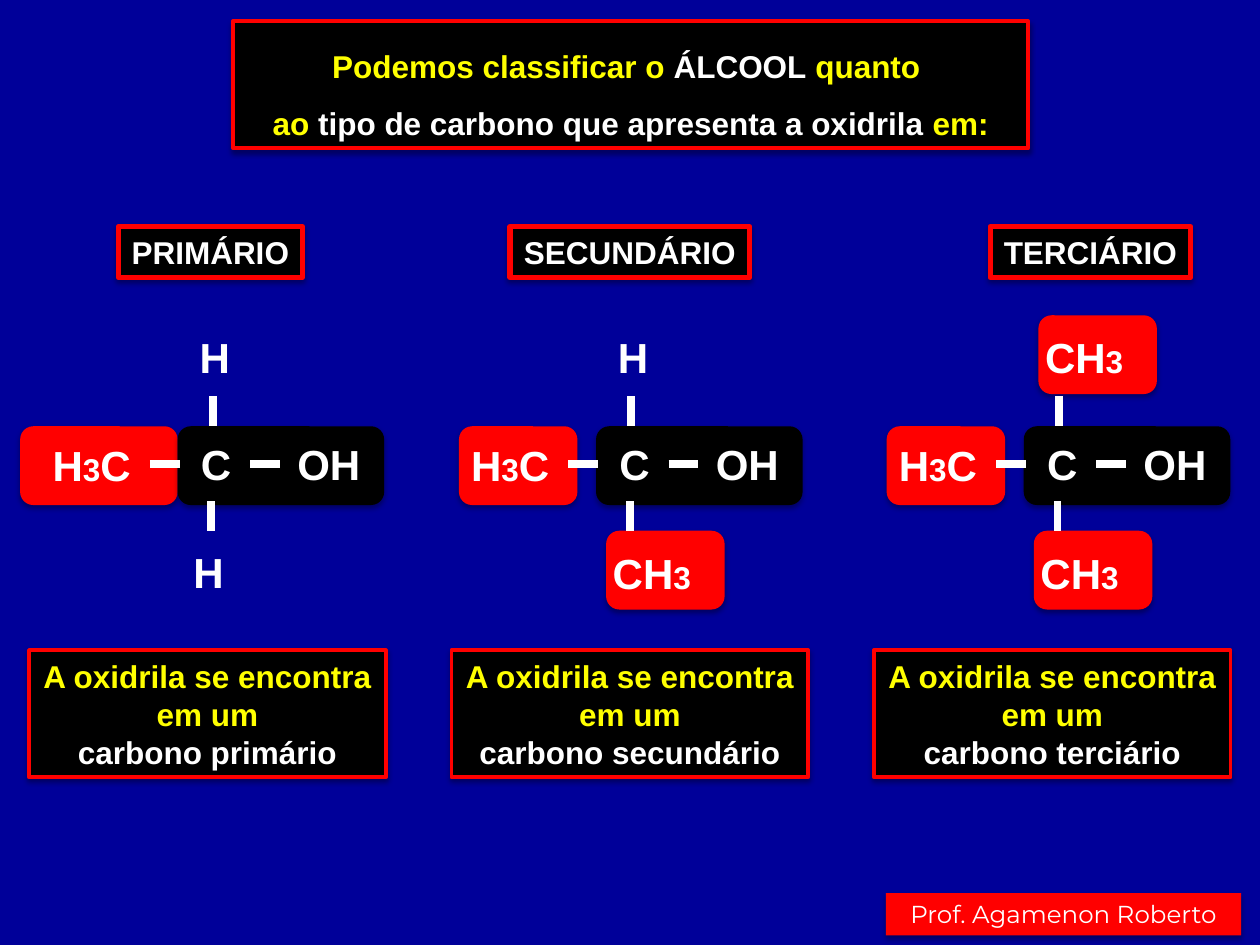
from itertools import groupby
from lxml import etree
from pptx import Presentation
from pptx.dml.color import RGBColor
from pptx.enum.shapes import MSO_CONNECTOR, MSO_SHAPE
from pptx.enum.text import MSO_ANCHOR, PP_ALIGN
from pptx.oxml.ns import qn
from pptx.util import Pt

RECT, ROUND = MSO_SHAPE.RECTANGLE, MSO_SHAPE.ROUNDED_RECTANGLE
LINE = MSO_CONNECTOR.STRAIGHT
MID, TOP = MSO_ANCHOR.MIDDLE, MSO_ANCHOR.TOP
CENTER = PP_ALIGN.CENTER
NAVY, BLACK, RED = "000099", "000000", "FF0000"
YELLOW, WHITE = "FFFF00", "FFFFFF"

TITLE = [
    [("Podemos classificar o ", YELLOW), ("ÁLCOOL", WHITE), (" quanto ", YELLOW)],
    [("ao ", YELLOW), ("tipo de carbono que apresenta a oxidrila", WHITE),
     (" em:", YELLOW)],
]
TYPES = [
    {"name": "PRIMÁRIO", "head": (67.6, 105.2), "kind": "carbono primário",
     "left": 101.5, "arm": 90, "top": "H", "low": "H"},
    {"name": "SECUNDÁRIO", "head": (291.4, 137), "kind": "carbono secundário",
     "left": 340.6, "arm": 67.7, "top": "H", "low": "CH3"},
    {"name": "TERCIÁRIO", "head": (565.8, 114.6), "kind": "carbono terciário",
     "left": 585, "arm": 67.7, "top": "CH3", "low": "CH3"},
]
BONDS = [(-15.8, 265, 1.2, 265), (41.5, 265, 58.5, 265),
         (20.2, 226.3, 20.2, 243.2), (19.3, 286.5, 19.3, 303.4)]
NOTE_LEFT, NOTE_STEP = 16.6, 241.4

deck = Presentation()
deck.slide_width, deck.slide_height = Pt(720), Pt(540)
slide = deck.slides.add_slide(deck.slide_layouts[6])
slide.background.fill.solid()


def tint(code):
    """Turn a hex string into a colour."""
    return RGBColor.from_string(code)


def shade(shape):
    """Give a shape its soft shadow."""
    shape.shadow.inherit = False
    glow = etree.SubElement(
        shape._element.spPr.find(qn("a:effectLst")), qn("a:outerShdw"),
        blurRad=str(Pt(3.1)), dist=str(Pt(1.8)), dir="5400000", rotWithShape="0")
    tone = etree.SubElement(glow, qn("a:srgbClr"), val=BLACK)
    etree.SubElement(tone, qn("a:alpha"), val="35000")


def box(left, top, width, height, fill, kind=RECT, edge=0):
    """Draw a filled box, with a red edge if asked."""
    shape = slide.shapes.add_shape(kind, Pt(left), Pt(top), Pt(width), Pt(height))
    shape.fill.solid()
    shape.fill.fore_color.rgb = tint(fill)
    if edge:
        shape.line.color.rgb = tint(RED)
        shape.line.width = Pt(edge)
    else:
        shape.line.fill.background()
    shade(shape)
    return shape


def write(shape, rows, size=18, font="Arial", bold=True, space=1.0, anchor=MID,
          wrap=False):
    """Fill a shape with rows of (text, colour[, size]) runs."""
    frame = shape.text_frame
    frame.word_wrap, frame.vertical_anchor = wrap, anchor
    for i, row in enumerate(rows):
        para = frame.add_paragraph() if i else frame.paragraphs[0]
        para.alignment, para.line_spacing = CENTER, space
        for text, color, *own in row:
            run = para.add_run()
            run.text = text
            run.font.name, run.font.bold = font, bold
            run.font.size = Pt(own[0] if own else size)
            run.font.color.rgb = tint(color)


def atom(left, top, width, text):
    """Write a formula with smaller digits."""
    label = slide.shapes.add_textbox(Pt(left), Pt(top), Pt(width), Pt(36.4))
    runs = [("".join(part), WHITE, 18 if digit else 24)
            for digit, part in groupby(text, str.isdigit)]
    write(label, [runs], anchor=TOP)


def bond(x1, y1, x2, y2):
    """Draw a thick white bond."""
    line = slide.shapes.add_connector(LINE, Pt(x1), Pt(y1), Pt(x2), Pt(y2))
    line.line.color.rgb = tint(WHITE)
    line.line.width = Pt(4.5)
    etree.SubElement(line._element.spPr, qn("a:effectLst"))


def group(left, top, text, lone):
    """Place a red CH3 group or a lone atom."""
    if text == "H":
        atom(left + lone, top + 5.5, 32.4, text)
    else:
        box(left, top, 67.7, 45, RED, ROUND)
        atom(left - 3.8, top + 5.8, 59.8, text)


def draw(left, arm, top, low):
    """Draw one alcohol around its carbon."""
    edge = left - (90 if arm == 90 else 78.3)
    group(left + 8.4, 180.2, top, -3.4)
    group(left + 5.8, 303.3, low, -4.4)
    box(edge, 243.6, arm, 45, RED, ROUND)
    box(left, 243.6, 118, 45, BLACK, ROUND)
    for x1, y1, x2, y2 in BONDS:
        bond(left + x1, y1, left + x2, y2)
    atom(left - 79, 247.7, 59.8, "H3C")
    atom(left + 5.8, 247.2, 32.4, "C")
    atom(left + 60.5, 247.2, 51.8, "OH")


slide.background.fill.fore_color.rgb = tint(NAVY)
write(box(133.2, 12.1, 454.3, 72.7, BLACK, edge=2.25), TITLE, space=1.5, wrap=True)
for i, item in enumerate(TYPES):
    x, width = item["head"]
    write(box(x, 129.5, width, 29.1, BLACK, edge=3), [[(item["name"], WHITE)]])
    draw(item["left"], item["arm"], item["top"], item["low"])
    note = box(NOTE_LEFT + i * NOTE_STEP, 371.5, 203.8, 72.7, BLACK, edge=2.25)
    write(note, [[("A oxidrila se encontra", YELLOW)], [("em um", YELLOW)],
                 [(item["kind"], WHITE)]])
write(box(506.2, 510.4, 203.1, 24.2, RED), [[("Prof. Agamenon Roberto", WHITE)]],
      size=14, font="Montserrat", bold=False, anchor=TOP)
deck.save("out.pptx")
